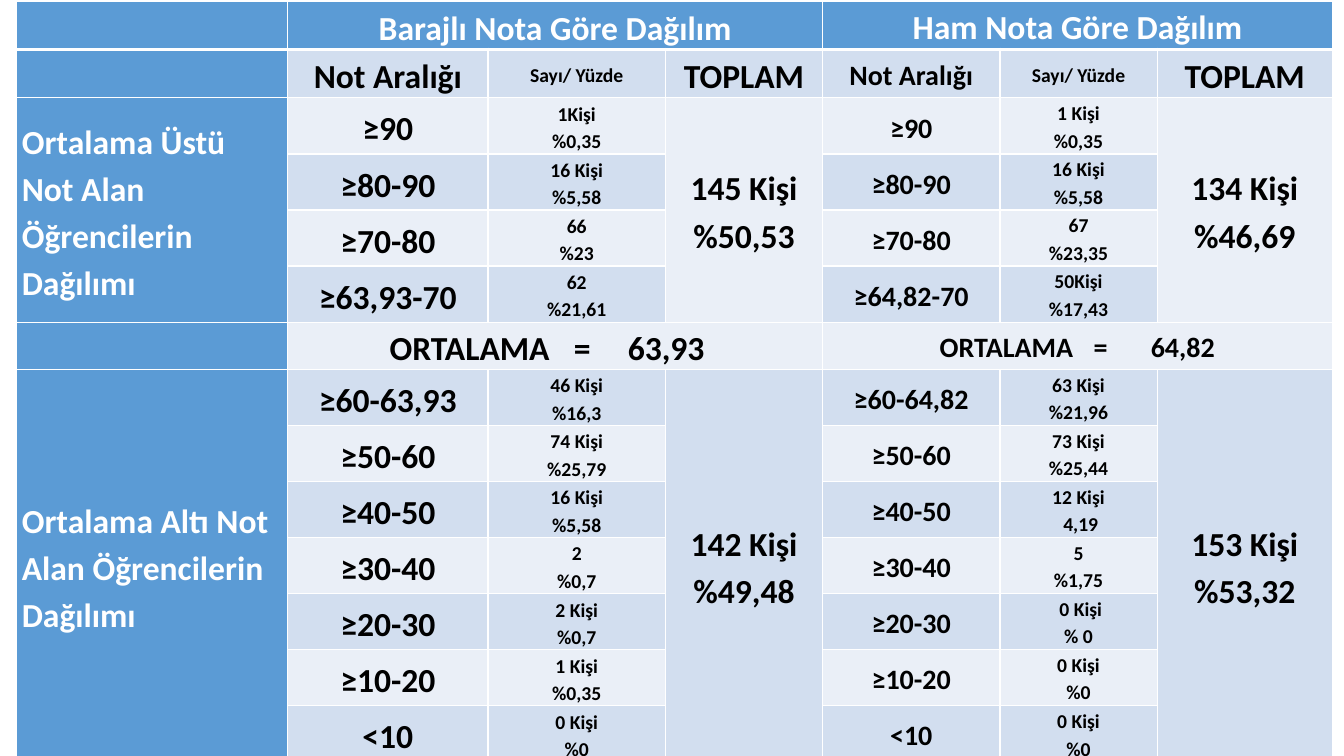
from dataclasses import dataclass

from lxml import etree
from pptx import Presentation
from pptx.dml.color import RGBColor
from pptx.enum.text import MSO_ANCHOR, PP_ALIGN
from pptx.oxml.ns import qn
from pptx.table import Table, _Cell
from pptx.util import Cm, Pt

LEFT, CENTER = PP_ALIGN.LEFT, PP_ALIGN.CENTER
MIDDLE = MSO_ANCHOR.MIDDLE
BLUE, PALE, PALEST = "5B9BD5", "D2DEEF", "EAEFF7"
WHITE, BLACK = "FFFFFF", "000000"

COLUMN_WIDTHS = (6.83, 5.05, 4.47, 3.96, 4.47, 3.96, 4.42)
ROW_HEIGHTS = (1.12, 1.17, *[1.32] * 4, 1.12, *[1.32] * 6, 0.91)
HEADER_ROW, LABEL_ROW, ABOVE_ROW, MEAN_ROW, BELOW_ROW = 0, 1, 2, 6, 7
LAST_ROW = len(ROW_HEIGHTS) - 1


@dataclass(frozen=True)
class Distribution:
    """One half of the table: grade ranges with counts, totals and the mean."""
    column: int
    title: str
    range_size: int
    above: tuple[tuple[str, str], ...]
    below: tuple[tuple[str, str], ...]
    above_total: str
    below_total: str
    mean: str
    mean_size: int
    mean_indent: float
    mean_tabs: tuple[float, float]


DISTRIBUTIONS = (
    Distribution(
        column=1, title="Barajlı Nota Göre Dağılım", range_size=24,
        above=(("≥90", "1Kişi\n%0,35"), ("≥80-90", "16 Kişi\n%5,58"),
               ("≥70-80", "66\n%23"), ("≥63,93-70", "62\n%21,61")),
        below=(("≥60-63,93", "46 Kişi\n%16,3"), ("≥50-60", "74 Kişi\n%25,79"),
               ("≥40-50", "16 Kişi\n%5,58"), ("≥30-40", "2\n%0,7"),
               ("≥20-30", "2 Kişi\n%0,7"), ("≥10-20", "1 Kişi\n%0,35"),
               ("<10", "0 Kişi\n%0")),
        above_total="145 Kişi\n%50,53", below_total="142 Kişi\n%49,48",
        mean="63,93", mean_size=24, mean_indent=2.57, mean_tabs=(4.64, 6.0)),
    Distribution(
        column=4, title="Ham Nota Göre Dağılım", range_size=20,
        above=(("≥90", "1 Kişi\n%0,35"), ("≥80-90", "16 Kişi\n%5,58"),
               ("≥70-80", "67\n%23,35"), ("≥64,82-70", "50Kişi\n%17,43")),
        below=(("≥60-64,82", "63 Kişi\n%21,96"), ("≥50-60", "73 Kişi\n%25,44"),
               ("≥40-50", "12 Kişi\n 4,19"), ("≥30-40", "5\n%1,75"),
               ("≥20-30", " 0 Kişi\n% 0"), ("≥10-20", "0 Kişi\n%0"),
               ("<10", "0 Kişi\n%0")),
        above_total="134 Kişi\n%46,69", below_total="153 Kişi\n%53,32",
        mean="64,82", mean_size=20, mean_indent=2.95, mean_tabs=(3.88, 5.32)),
)


def colour(value: str) -> RGBColor:
    return RGBColor.from_string(value)


def write(cell: _Cell, text: str, *, size: int = 24, ink: str = BLACK,
          align: PP_ALIGN = CENTER) -> None:
    cell.text = text
    for para in cell.text_frame.paragraphs:
        para.alignment = align
        para.line_spacing = 1.15
        for span in para.runs:
            span.font.name = "Calibri"
            span.font.size = Pt(size)
            span.font.bold = True
            span.font.color.rgb = colour(ink)


def add_border(cell: _Cell, side: str, width: float) -> None:
    line = etree.SubElement(cell._tc.get_or_add_tcPr(), qn(f"a:ln{side}"),
                            w=str(Pt(width)))
    fill = etree.SubElement(line, qn("a:solidFill"))
    etree.SubElement(fill, qn("a:srgbClr"), val=WHITE)


def style_cells(table: Table) -> None:
    """Give every cell its borders, banded fill, margins and anchor."""
    for row in range(len(ROW_HEIGHTS)):
        for column in range(len(COLUMN_WIDTHS)):
            cell = table.cell(row, column)
            for side in "LRTB":
                under_header = (row, side) in ((HEADER_ROW, "B"), (LABEL_ROW, "T"))
                add_border(cell, side, 3 if under_header else 1)
            band = PALE if row % 2 else PALEST
            cell.fill.solid()
            cell.fill.fore_color.rgb = colour(
                BLUE if row == HEADER_ROW or column == 0 else band)
            inset = column < 3 and row != MEAN_ROW
            cell.margin_left = cell.margin_right = Cm(0.13 if inset else 0)
            cell.margin_top = Cm(0.03 if inset else 0)
            cell.margin_bottom = 0
            cell.vertical_anchor = MIDDLE


def merge(table: Table, top: int, left: int, bottom: int, right: int) -> _Cell:
    cell = table.cell(top, left)
    cell.merge(table.cell(bottom, right))
    return cell


def write_mean(cell: _Cell, half: Distribution) -> None:
    write(cell, f"ORTALAMA\t=\t{half.mean}", size=half.mean_size, align=LEFT)
    cell.margin_left = Cm(half.mean_indent)
    properties = cell.text_frame.paragraphs[0]._p.get_or_add_pPr()
    stops = etree.SubElement(properties, qn("a:tabLst"))
    for position in half.mean_tabs:
        etree.SubElement(stops, qn("a:tab"), pos=str(Cm(position)), algn="l")


def fill_distribution(table: Table, half: Distribution) -> None:
    first, total = half.column, half.column + 2
    write(merge(table, HEADER_ROW, first, HEADER_ROW, total), half.title, ink=WHITE)
    labels = (("Not Aralığı", half.range_size), ("Sayı/ Yüzde", 14), ("TOPLAM", 24))
    for offset, (label, size) in enumerate(labels):
        write(table.cell(LABEL_ROW, first + offset), label, size=size)
    for start, grades, sum_text in ((ABOVE_ROW, half.above, half.above_total),
                                    (BELOW_ROW, half.below, half.below_total)):
        for row, (grade_range, count) in enumerate(grades, start):
            write(table.cell(row, first), grade_range, size=half.range_size)
            write(table.cell(row, first + 1), count, size=14)
        end = start + len(grades) - 1
        write(merge(table, start, total, end, total), sum_text)
    write_mean(merge(table, MEAN_ROW, first, MEAN_ROW, total), half)


def main() -> None:
    deck = Presentation()
    deck.slide_width, deck.slide_height = Cm(33.87), Cm(19.05)
    page = deck.slides.add_slide(deck.slide_layouts[6])
    table = page.shapes.add_table(
        len(ROW_HEIGHTS), len(COLUMN_WIDTHS), Cm(0.42), Cm(0.03),
        Cm(sum(COLUMN_WIDTHS)), Cm(sum(ROW_HEIGHTS))).table
    for column, width in zip(table.columns, COLUMN_WIDTHS):
        column.width = Cm(width)
    for row, height in zip(table.rows, ROW_HEIGHTS):
        row.height = Cm(height)
    style_cells(table)
    for top, bottom, place in ((ABOVE_ROW, MEAN_ROW - 1, "Üstü"),
                               (BELOW_ROW, LAST_ROW, "Altı")):
        write(merge(table, top, 0, bottom, 0),
              f"Ortalama {place} Not Alan Öğrencilerin Dağılımı",
              ink=WHITE, align=LEFT)
    for half in DISTRIBUTIONS:
        fill_distribution(table, half)
    deck.save("out.pptx")


if __name__ == "__main__":
    main()
